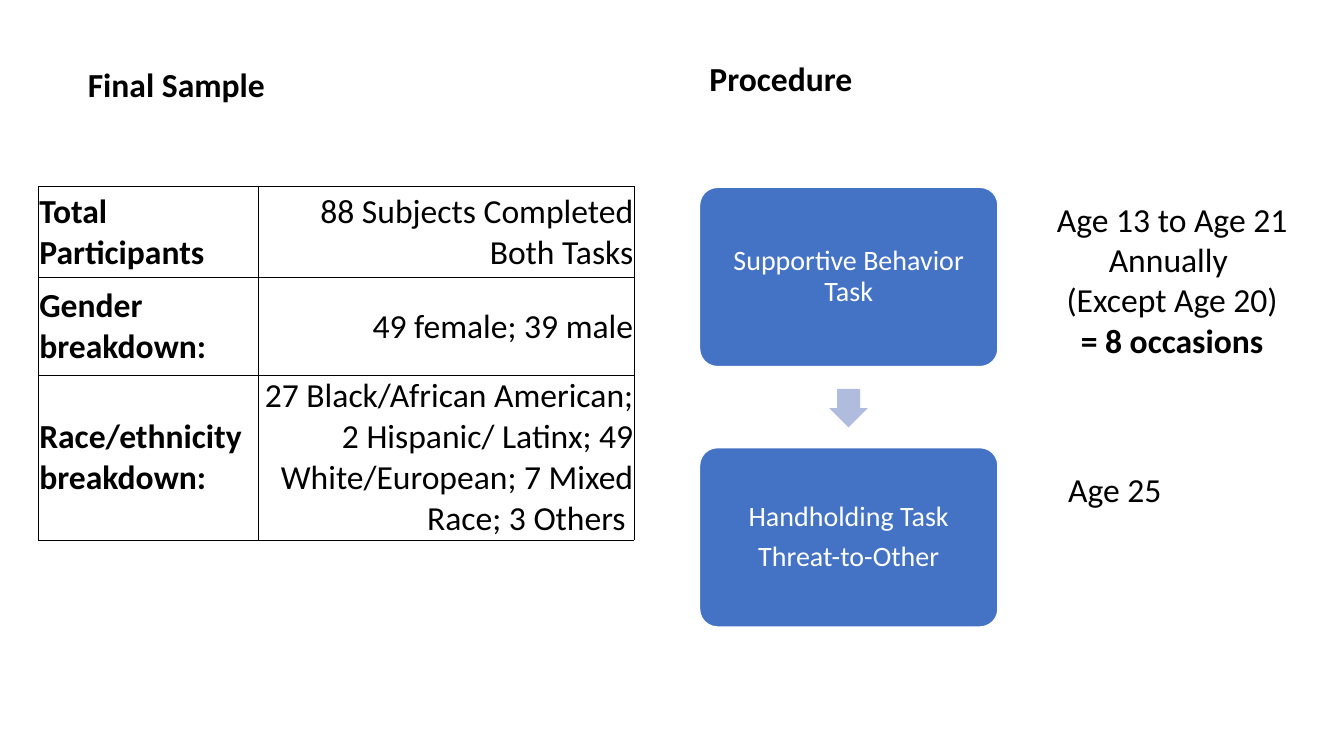
from lxml import etree
from pptx import Presentation
from pptx.dml.color import RGBColor
from pptx.enum.shapes import MSO_SHAPE
from pptx.enum.text import MSO_ANCHOR, MSO_AUTO_SIZE, PP_ALIGN
from pptx.oxml.ns import qn
from pptx.util import Cm, Pt

ROUND = MSO_SHAPE.ROUNDED_RECTANGLE
ARROW = MSO_SHAPE.RIGHT_ARROW
MIDDLE = MSO_ANCHOR.MIDDLE
TOP = MSO_ANCHOR.TOP
FIXED = MSO_AUTO_SIZE.NONE
GROW = MSO_AUTO_SIZE.SHAPE_TO_FIT_TEXT
LEFT = PP_ALIGN.LEFT
CENTER = PP_ALIGN.CENTER
RIGHT = PP_ALIGN.RIGHT

COLORS = {"ink": "000000", "paper": "FFFFFF", "box": "4472C4", "arrow": "B0BCDE"}
SIDES = ("left", "top", "width", "height")
HEAD = {"alignment": LEFT, "line_spacing": 0.9}
STEP = {"alignment": CENTER, "line_spacing": 0.9, "space_after": Pt(7)}


def paint(name):
    return RGBColor.from_string(COLORS[name])


def apply(target, values):
    for name, value in values.items():
        setattr(target, name, value)


class Board:
    font = "Calibri"
    size = 24

    def __init__(self, deck):
        self.slide = deck.slides.add_slide(deck.slide_layouts[5])
        self.shapes = self.slide.shapes

    def put(self, frame, lines, form, color="ink", size=size, bold=()):
        for index, line in enumerate(lines):
            para = frame.paragraphs[0] if index == 0 else frame.add_paragraph()
            apply(para, form)
            run = para.add_run()
            run.text = line
            apply(run.font, {"name": self.font, "size": Pt(size), "bold": index in bold})
            run.font.color.rgb = paint(color)

    def title(self, text, place):
        head = self.shapes.title
        apply(head, dict(zip(SIDES, map(Cm, place))))
        apply(head.text_frame, {"vertical_anchor": MIDDLE, "auto_size": FIXED, "word_wrap": True})
        self.put(head.text_frame, [text], HEAD, bold=(0,))

    def label(self, lines, place, form, anchor=TOP, fit=GROW, wrap=True, bold=()):
        frame = self.shapes.add_textbox(*map(Cm, place)).text_frame
        apply(frame, {"vertical_anchor": anchor, "auto_size": fit, "word_wrap": wrap})
        self.put(frame, lines, form, bold=bold)

    def shape(self, kind, place, fill, *bends):
        item = self.shapes.add_shape(kind, *map(Cm, place))
        item.shadow.inherit = False
        item.fill.solid()
        item.fill.fore_color.rgb = paint(fill)
        for index, bend in enumerate(bends):
            item.adjustments[index] = bend
        return item

    def step(self, lines, place):
        box = self.shape(ROUND, place, "box", 0.1)
        box.line.color.rgb = paint("paper")
        box.line.width = Pt(1)
        frame = box.text_frame
        edges = ("margin_left", "margin_right", "margin_top", "margin_bottom")
        apply(frame, dict.fromkeys(edges, Cm(0.33)))
        apply(frame, {"vertical_anchor": MIDDLE, "word_wrap": True})
        self.put(frame, lines, STEP, "paper", 20)

    def arrow(self, place):
        item = self.shape(ARROW, place, "arrow", 0.6, 0.5)
        item.line.fill.background()
        item.rotation = 90

    def border(self, cell):
        props = cell._tc.get_or_add_tcPr()
        for side in ("lnL", "lnR", "lnT", "lnB"):
            edge = etree.SubElement(props, qn("a:" + side), w=str(Pt(0.5)))
            fill = etree.SubElement(edge, qn("a:solidFill"))
            etree.SubElement(fill, qn("a:srgbClr"), val=COLORS["ink"])

    def table(self, rows, place, widths, heights):
        grid = self.shapes.add_table(len(rows), len(widths), *map(Cm, place)).table
        apply(grid, {"first_row": False, "horz_banding": False})
        for col, width in zip(grid.columns, widths):
            col.width = Cm(width)
        for line, height in zip(grid.rows, heights):
            line.height = Cm(height)
        thin = dict.fromkeys(("margin_left", "margin_right", "margin_top"), Cm(0.02))
        for r, row in enumerate(rows):
            for c, lines in enumerate(row):
                cell = grid.cell(r, c)
                apply(cell, {**thin, "margin_bottom": 0, "vertical_anchor": MIDDLE})
                self.border(cell)
                cell.fill.background()
                form = {"alignment": RIGHT if c else LEFT}
                self.put(cell.text_frame, lines, form, bold=() if c else range(len(lines)))


def main():
    deck = Presentation()
    apply(deck, {"slide_width": Cm(33.87), "slide_height": Cm(19.05)})
    board = Board(deck)
    board.title("Final Sample", (1.96, 0.33, 29.21, 3.68))
    sample = [
        (["Total Participants"], ["88 Subjects Completed Both Tasks"]),
        (["Gender breakdown:"], ["49 female; 39 male"]),
        (
            ["Race/ethnicity", "breakdown:"],
            ["27 Black/African American; 2 Hispanic/ Latinx; 49 White/European; 7 Mixed Race; 3 Others "],
        ),
    ]
    board.table(sample, (0.97, 4.7, 15.01, 8.87), (5.54, 9.47), (2.29, 2.46, 4.12))
    board.label(["Procedure"], (17.63, 0.18, 29.21, 3.68), HEAD, MIDDLE, FIXED, bold=(0,))
    steps = [["Supportive Behavior Task"], ["Handholding Task", "Threat-to-Other"]]
    for index, lines in enumerate(steps):
        board.step(lines, (17.63, 4.72 + index * 6.56, 7.52, 4.52))
    board.arrow((20.9, 9.8, 0.97, 0.97))
    ages = ["Age 13 to Age 21 Annually ", "(Except Age 20)", "= 8 occasions"]
    board.label(ages, (25.22, 4.88, 8.64, 4.37), {"alignment": CENTER}, bold=(2,))
    board.label(["Age 25"], (26.67, 11.68, 2.9, 1.27), {"alignment": LEFT}, wrap=False)
    deck.save("out.pptx")


if __name__ == "__main__":
    main()
